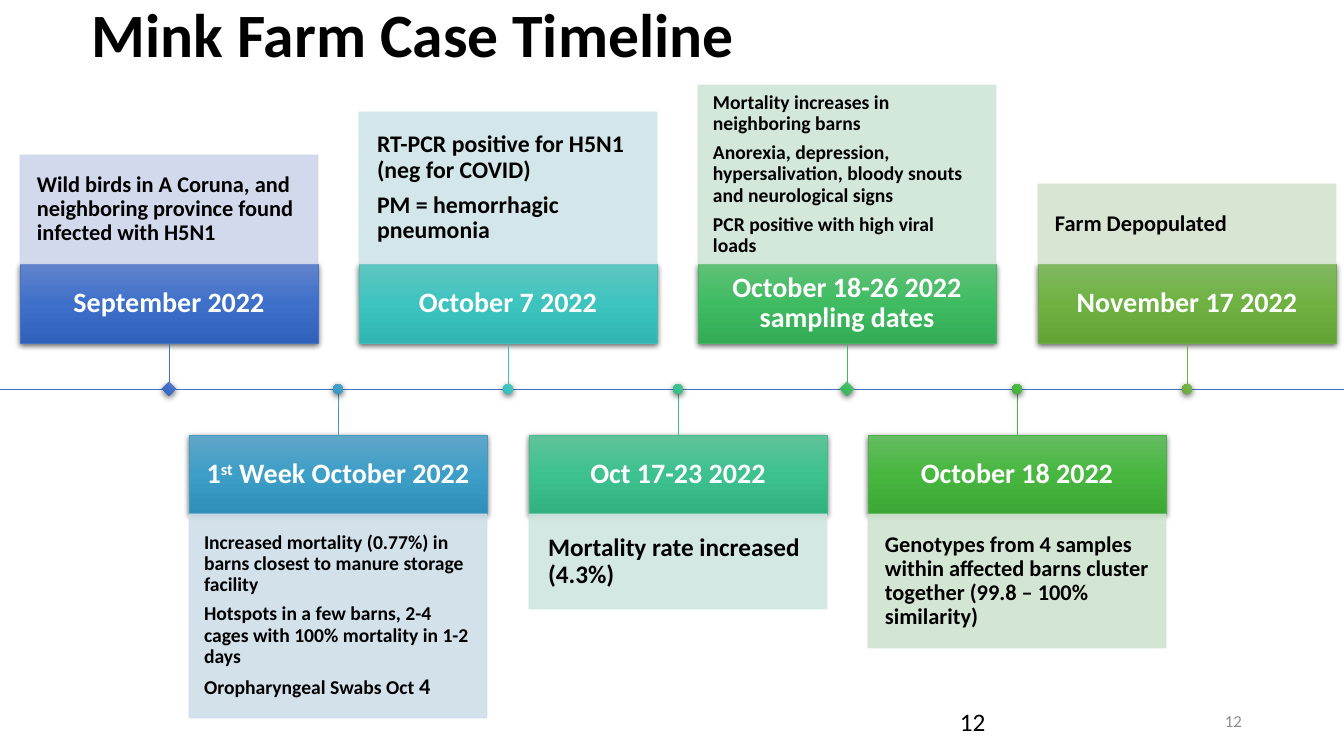
from copy import deepcopy
from dataclasses import dataclass

from pptx import Presentation
from pptx.dml.color import RGBColor
from pptx.enum.shapes import MSO_CONNECTOR, MSO_SHAPE
from pptx.enum.text import MSO_ANCHOR, PP_ALIGN
from pptx.oxml import parse_xml
from pptx.oxml.ns import nsdecls, qn
from pptx.oxml.xmlchemy import OxmlElement
from pptx.util import Emu, Pt

PX_PER_INCH = 100.8
SLIDE_WIDTH, SLIDE_HEIGHT = 1344, 756
CARD_LEFT, CARD_SPAN, CARD_WIDTH, HEADER_HEIGHT = 20, 1018, 298, 79
HEADER_ABOVE, AXIS, HEADER_BELOW = 264, 389, 435
MARKER = 10


@dataclass(frozen=True)
class Theme:
    font: str = "Calibri"
    ink: str = "000000"
    muted: str = "8C8C8C"
    on_header: str = "FFFFFF"
    axis: str = "4472C4"
    title: int = 44
    header: int = 20
    page_number: int = 18
    footer: int = 12
    hairline: float = 0.5


@dataclass(frozen=True)
class Span:
    text: str
    size: int = 0
    raised: bool = False


@dataclass(frozen=True)
class Event:
    """One card; each paragraph is a list of spans, the gradient runs top to bottom."""
    header: list
    details: list
    size: int
    height: int
    gradient: tuple
    line: str
    tint: str
    marker: MSO_SHAPE = MSO_SHAPE.OVAL


EVENTS = [
    Event([Span("September 2022")],
          [[Span("Wild birds in A Coruna, and neighboring province found infected with H5N1")]],
          16, 109, ("6183CB", "3E70CA", "3062BB"), "4472C4", "CFD5EA", MSO_SHAPE.RECTANGLE),
    Event([Span("1"), Span("st", raised=True), Span(" Week October 2022")],
          [[Span("Increased mortality (0.77%) in barns closest to manure storage facility")],
           [Span("Hotspots in a few barns, 2-4 cages with 100% mortality in 1-2 days")],
           [Span("Oropharyngeal Swabs Oct "), Span("4", 16)]],
          14, 204, ("61A6C8", "3D9EC7", "308FB8"), "449BC1", "CFDEE9"),
    Event([Span("October 7 2022")],
          [[Span("RT-PCR positive for H5N1 (neg for COVID)")],
           [Span("PM = hemorrhagic pneumonia")]],
          17, 152, ("60C6C1", "3DC4BF", "30B5B0"), "43BEB9", "CFE5E8"),
    Event([Span("Oct 17-23 2022")],
          [[Span("Mortality rate increased (4.3%)")]],
          18, 95, ("60C39A", "3DC18F", "31B080"), "43BB8D", "CFE6E0"),
    Event([Span("October 18-26 2022 sampling dates")],
          [[Span("Mortality increases in neighboring barns")],
           [Span("Anorexia, depression, hypersalivation, bloody snouts and neurological signs")],
           [Span("PCR positive with high viral loads")]],
          14, 179, ("60C077", "3FBC62", "33AC55"), "45B664", "CFE5D8", MSO_SHAPE.RECTANGLE),
    Event([Span("October 18 2022")],
          [[Span("Genotypes from 4 samples within affected barns cluster together "
                 "(99.8 – 100% similarity)")]],
          16, 134, ("65BC61", "48B740", "3CA735"), "4CB146", "CFE4D0"),
    Event([Span("November 17 2022")],
          [[Span("Farm Depopulated")]],
          16, 80, ("81B861", "6FB242", "62A336"), "70AD47", "D5E3CF"),
]


def px(length):
    return Emu(round(length * 914400 / PX_PER_INCH))


class Painter:
    def __init__(self, slide, theme):
        self.slide = slide
        self.theme = theme

    def set_text(self, box, paragraphs, size, color, bold=True, align=PP_ALIGN.LEFT,
                 anchor=MSO_ANCHOR.MIDDLE, inset=(10, 5), line_spacing=0.9, gap=0.0):
        """Fill a shape with paragraphs; gap is the space after, as a share of the size."""
        frame = box.text_frame
        frame.word_wrap = True
        frame.vertical_anchor = anchor
        frame.margin_left = frame.margin_right = px(inset[0])
        frame.margin_top = frame.margin_bottom = px(inset[1])
        for index, spans in enumerate(paragraphs):
            para = frame.add_paragraph() if index else frame.paragraphs[0]
            para.alignment = align
            para.line_spacing = line_spacing
            para.space_after = Pt(size * gap)
            for span in spans:
                run = para.add_run()
                run.text = span.text
                run.font.name = self.theme.font
                run.font.size = Pt(span.size or size)
                run.font.bold = bold
                run.font.color.rgb = RGBColor.from_string(color)
                if span.raised:
                    run._r.get_or_add_rPr().set("baseline", "30000")

    def label(self, left, top, width, height, text, size, color, **style):
        box = self.slide.shapes.add_textbox(px(left), px(top), px(width), px(height))
        self.set_text(box, [[Span(text)]], size, color, **style)

    def shape(self, kind, left, top, width, height):
        shape = self.slide.shapes.add_shape(kind, px(left), px(top), px(width), px(height))
        shape.shadow.inherit = False
        return shape

    def outline(self, shape, color):
        shape.line.color.rgb = RGBColor.from_string(color)
        shape.line.width = Pt(self.theme.hairline)

    def raise_surface(self, shape, gradient):
        """Give a shape the three-stop gradient and the soft shadow below it."""
        shape.fill.gradient()
        shape.fill.gradient_angle = 270
        stops = shape._element.spPr.find(".//" + qn("a:gsLst"))
        stops.insert(1, deepcopy(stops[0]))
        for index, (stop, color) in enumerate(zip(shape.fill.gradient_stops, gradient)):
            stop.position = index / 2
            stop.color.rgb = RGBColor.from_string(color)
        shape._element.spPr.find(qn("a:effectLst")).append(parse_xml(
            f'<a:outerShdw {nsdecls("a")} blurRad="57150" dist="19050" dir="5400000" '
            'algn="ctr" rotWithShape="0"><a:srgbClr val="000000">'
            '<a:alpha val="63000"/></a:srgbClr></a:outerShdw>'))

    def header(self, left, top, event):
        box = self.shape(MSO_SHAPE.RECTANGLE, left, top, CARD_WIDTH, HEADER_HEIGHT)
        self.raise_surface(box, event.gradient)
        self.outline(box, event.line)
        self.set_text(box, [event.header], self.theme.header, self.theme.on_header,
                      align=PP_ALIGN.CENTER, inset=(11, 11), gap=0.4)
        return box

    def details(self, left, top, event):
        box = self.shape(MSO_SHAPE.RECTANGLE, left, top, CARD_WIDTH, event.height)
        box.fill.solid()
        box.fill.fore_color.rgb = RGBColor.from_string(event.tint)
        self.outline(box, event.tint)
        for color in box._element.spPr.iter(qn("a:srgbClr")):
            alpha = OxmlElement("a:alpha")
            alpha.set("val", "90000")
            color.append(alpha)
        inset = event.size + 1
        self.set_text(box, event.details, event.size, self.theme.ink,
                      inset=(inset, inset), gap=0.4)

    def line(self, start, end, color):
        line = self.slide.shapes.add_connector(
            MSO_CONNECTOR.STRAIGHT, *(px(length) for length in (*start, *end)))
        self.outline(line, color)
        line._element.spPr.append(OxmlElement("a:effectLst"))
        return line

    def marker(self, center, event):
        dot = self.shape(event.marker, center - MARKER // 2, AXIS - MARKER // 2, MARKER, MARKER)
        dot.rotation = 45
        self.raise_surface(dot, event.gradient)
        dot.line.fill.background()

    def event(self, index, event):
        """Draw a card; even ones stand above the axis, odd ones hang below it."""
        above = index % 2 == 0
        left = CARD_LEFT + CARD_SPAN * index // (len(EVENTS) - 1)
        center = left + CARD_WIDTH // 2
        top = HEADER_ABOVE if above else HEADER_BELOW
        edge = top + HEADER_HEIGHT if above else top
        box = self.header(left, top, event)
        self.details(left, top - event.height if above else top + HEADER_HEIGHT, event)
        stem = self.line((center, edge), (center, AXIS), event.line)
        stem.begin_connect(box, 2 if above else 0)
        self.marker(center, event)


def main():
    deck = Presentation()
    deck.slide_width, deck.slide_height = px(SLIDE_WIDTH), px(SLIDE_HEIGHT)
    theme = Theme()
    page = Painter(deck.slides.add_slide(deck.slide_layouts[6]), theme)
    page.label(950, 701, 302, 40, "12", theme.footer, theme.muted, bold=False,
               align=PP_ALIGN.RIGHT, line_spacing=1.0)
    page.label(950, 701, 302, 40, "12", theme.page_number, theme.ink, bold=False,
               anchor=MSO_ANCHOR.TOP, line_spacing=1.0)
    page.label(82, 0, 1170, 76, "Mink Farm Case Timeline", theme.title, theme.ink)
    page.line((0, AXIS), (SLIDE_WIDTH, AXIS), theme.axis)
    for index, event in enumerate(EVENTS):
        page.event(index, event)
    deck.save("out.pptx")


if __name__ == "__main__":
    main()
